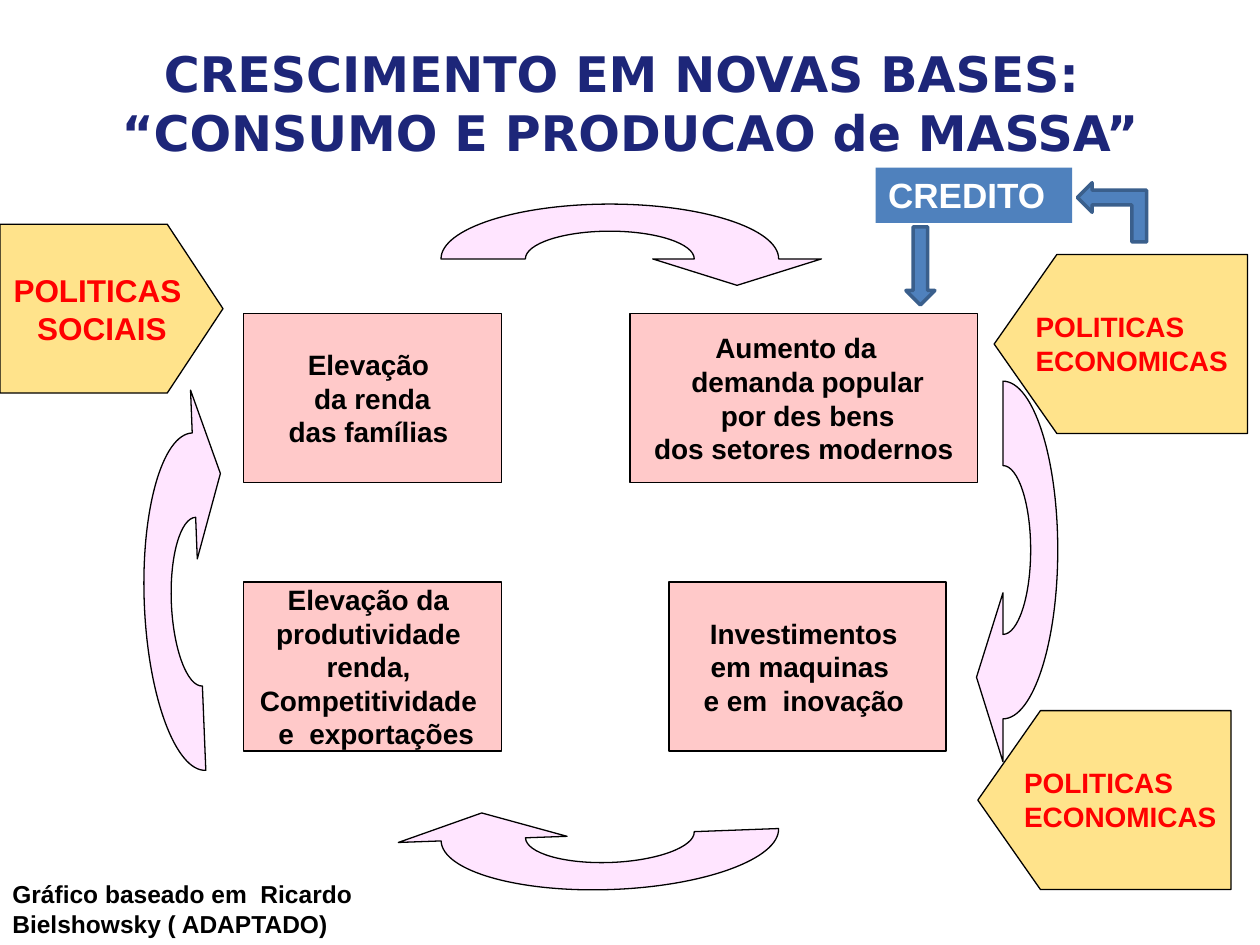
from pptx import Presentation
from pptx.dml.color import RGBColor
from pptx.enum.shapes import MSO_SHAPE
from pptx.enum.text import MSO_ANCHOR, MSO_AUTO_SIZE, PP_ALIGN
from pptx.oxml.ns import qn
from pptx.util import Inches, Pt

RECT, PENTAGON = MSO_SHAPE.RECTANGLE, MSO_SHAPE.PENTAGON
BENT_ARROW, DOWN_ARROW = MSO_SHAPE.BENT_UP_ARROW, MSO_SHAPE.DOWN_ARROW
TOP, MIDDLE = MSO_ANCHOR.TOP, MSO_ANCHOR.MIDDLE
LEFT, CENTER = PP_ALIGN.LEFT, PP_ALIGN.CENTER
GROW = MSO_AUTO_SIZE.SHAPE_TO_FIT_TEXT

NAVY = RGBColor(0x1D, 0x26, 0x79)
BLACK = RGBColor(0, 0, 0)
WHITE = RGBColor(0xFF, 0xFF, 0xFF)
RED = RGBColor(0xFF, 0, 0)
PINK = RGBColor(0xFF, 0xC9, 0xC9)
LILAC = RGBColor(0xFF, 0xE5, 0xFF)
YELLOW = RGBColor(0xFF, 0xE3, 0x8B)
BLUE = RGBColor(0x4F, 0x81, 0xBD)
DARK_BLUE = RGBColor(0x3A, 0x5F, 0x8C)

KAPPA = 0.55


def write(tf, lines, size, color, align, anchor, wrap, font="Arial"):
    tf.text = "\n".join(lines)
    tf.word_wrap = wrap
    tf.vertical_anchor = anchor
    for p in tf.paragraphs:
        p.alignment = align
        for r in p.runs:
            r.font.name = font
            r.font.size = Pt(size)
            r.font.bold = True
            r.font.color.rgb = color


def paint(shape, fill, line=BLACK, width=0.75):
    shape.shadow.inherit = False
    shape.fill.solid()
    shape.fill.fore_color.rgb = fill
    if line is None:
        shape.line.fill.background()
    else:
        shape.line.color.rgb = line
        shape.line.width = Pt(width)


def add_block(s, kind, box, fill, line=BLACK, width=0.75):
    shape = s.shapes.add_shape(kind, *map(Inches, box))
    paint(shape, fill, line, width)
    return shape


def add_title(s, box, text):
    title = s.shapes.title
    title.left, title.top, title.width, title.height = map(Inches, box)
    write(title.text_frame, [text], 28, NAVY, CENTER, MIDDLE, True, "DejaVu Sans")


def add_stage(s, box, lines):
    stage = add_block(s, RECT, box, PINK)
    write(stage.text_frame, lines, 16, BLACK, CENTER, MIDDLE, False)


def half_ellipse(rx, ry):
    return [(rx, -KAPPA * ry), (KAPPA * rx, -ry), (0, -ry),
            (-KAPPA * rx, -ry), (-rx, -KAPPA * ry), (-rx, 0)]


def bend(line, controls):
    curve = line.makeelement(qn("a:cubicBezTo"), {})
    line.addprevious(curve)
    for segment in (*controls, line):
        curve.append(segment[0])
        segment.getparent().remove(segment)


def add_cycle_arrow(s, box, angle):
    left, top, width, height = box
    cx, cy = left + width / 2, top + height / 2
    inner = half_ellipse(0.67, 0.22)
    outer = [(-x, y) for x, y in half_ellipse(1.34, 0.435)]
    head = [(1.68, 0), (1.01, 0.21), (0.34, 0)]
    outline = [(0.67, 0), *inner, (-1.34, 0), *outer, *head]
    points = [(Inches(cx + x), Inches(cy + y)) for x, y in outline]
    builder = s.shapes.build_freeform(*points[0])
    builder.add_line_segments(points[1:], close=True)
    arrow = builder.convert_to_shape()

    lines = arrow.element.findall(".//" + qn("a:lnTo"))
    for first in (0, 3, 7, 10):
        bend(lines[first + 2], lines[first:first + 2])
    arrow.width, arrow.height = Inches(width), Inches(height)
    frame = arrow.element.find(".//" + qn("a:path"))
    frame.set("w", str(arrow.width))
    frame.set("h", str(arrow.height))
    arrow.rotation = angle
    paint(arrow, LILAC)


def add_label(s, box, text, size, color):
    label = s.shapes.add_textbox(*map(Inches, box))
    write(label.text_frame, [text], size, color, LEFT, TOP, True)
    label.text_frame.auto_size = GROW


def add_social_policy(s, box):
    tag = add_block(s, PENTAGON, box, YELLOW)
    tag.adjustments[0] = 0.33
    write(tag.text_frame, ["POLITICAS", " SOCIAIS"], 18, RED, CENTER, MIDDLE, False)


def add_economic_policy(s, box, label_left):
    tag = add_block(s, PENTAGON, box, YELLOW)
    tag.adjustments[0] = 0.35
    tag.rotation = 180
    add_label(s, (label_left, box[1] + 0.39, 1.85, 0.64),
              "POLITICAS ECONOMICAS", 16, RED)


def add_credit(s, box):
    left, top, width, height = box
    credit = add_block(s, RECT, box, BLUE, None)
    write(credit.text_frame, ["CREDITO"], 20, WHITE, LEFT, TOP, True)
    credit.text_frame.auto_size = GROW
    bent = add_block(s, BENT_ARROW, (left + 1.64, top + 0.08, 0.47, 0.55),
                     BLUE, DARK_BLUE, 2)
    bent.rotation = 270
    add_block(s, DOWN_ARROW, (left + 0.24, top + 0.47, 0.23, 0.62), BLUE, DARK_BLUE, 2)


def main():
    prs = Presentation()
    prs.slide_width, prs.slide_height = Inches(10), Inches(7.5)
    s = prs.slides.add_slide(prs.slide_layouts[5])

    add_title(s, (0.5, 0.06, 9, 1.5),
              "CRESCIMENTO EM NOVAS BASES:  “CONSUMO E PRODUCAO de MASSA”")

    upper, lower, height = 2.49, 4.62, 1.34
    stages = [
        (1.93, upper, 2.05, ["Elevação ", "da renda", "das famílias "]),
        (5, upper, 2.76, ["Aumento da  ", " demanda popular", " por des bens",
                          " dos setores modernos "]),
        (1.93, lower, 2.05, ["Elevação da ", "produtividade ", "renda, ",
                             "Competitividade ", " e  exportações"]),
        (5.31, lower, 2.2, ["Investimentos ", "em maquinas  ", "e em  inovação "]),
    ]
    for left, top, width, lines in stages:
        add_stage(s, (left, top, width, height), lines)

    for left, top, angle in [(3.5, 1.62, 0), (3.5, 6.19, 177.9),
                             (6.62, 3.93, 90), (0.24, 4.34, 267.7)]:
        add_cycle_arrow(s, (left, top, 2.68, 0.87), angle)

    add_label(s, (0, 6.93, 4.13, 0.57),
              "Gráfico baseado em  Ricardo Bielshowsky ( ADAPTADO)", 14, BLACK)
    add_social_policy(s, (0, 1.78, 1.77, 1.34))
    add_economic_policy(s, (7.89, 2.02, 2.01, 1.42), 8.12)
    add_economic_policy(s, (7.76, 5.64, 2.01, 1.42), 8.03)
    add_credit(s, (6.95, 1.33, 1.56, 0.44))

    prs.save("out.pptx")


if __name__ == "__main__":
    main()
